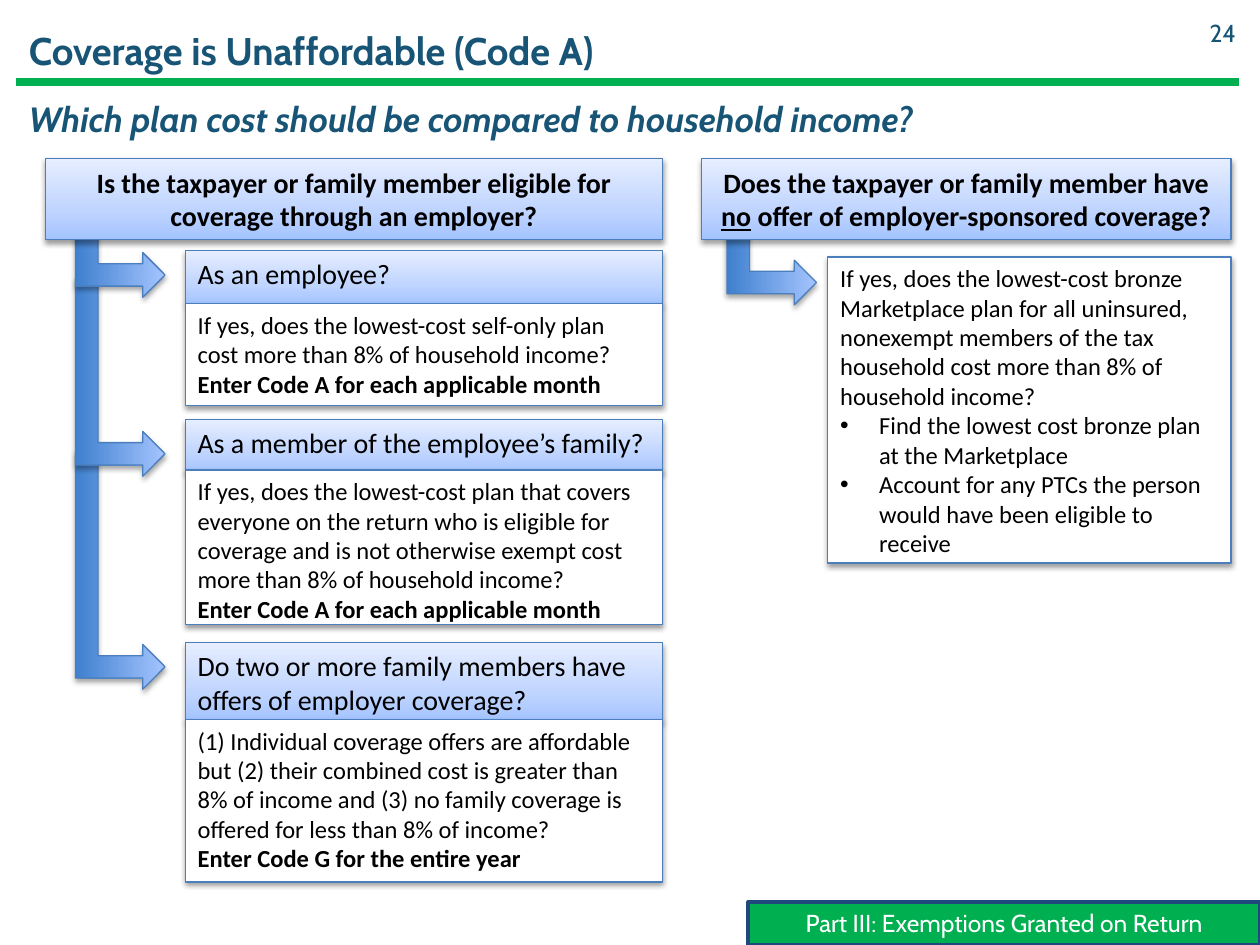
from dataclasses import dataclass

from lxml.etree import SubElement
from pptx import Presentation
from pptx.dml.color import RGBColor
from pptx.enum.shapes import MSO_CONNECTOR, MSO_SHAPE
from pptx.enum.text import MSO_ANCHOR, MSO_AUTO_SIZE, PP_ALIGN
from pptx.oxml.ns import qn
from pptx.util import Pt

EMU_PER_PX = 9144


def px(length):
    return length * EMU_PER_PX


@dataclass(frozen=True)
class Theme:
    heading_font: str = "Cabin"
    body_font: str = "Calibri"
    title_size: int = 22
    subtitle_size: int = 20
    header_size: int = 16
    body_size: int = 14
    ink: str = "000000"
    paper: str = "FFFFFF"
    teal: str = "175475"
    green: str = "00B050"
    navy: str = "1F497D"
    outline: str = "4B7EBC"
    header_stops: tuple = ((0, "A4C4FF"), (35, "BFD4FF"), (100, "E6EEFF"))
    arrow_stops: tuple = ((0, "3F80CE"), (100, "A4C4FF"))


class SlideBuilder:
    def __init__(self, slide, theme):
        self.slide = slide
        self.theme = theme

    def fill_text(self, shape, paragraphs, size, color, anchor=MSO_ANCHOR.TOP,
                  align=PP_ALIGN.LEFT, font=None, **emphasis):
        frame = shape.text_frame
        layout = {"word_wrap": True, "auto_size": MSO_AUTO_SIZE.NONE, "vertical_anchor": anchor}
        for key, value in layout.items():
            setattr(frame, key, value)
        base = {"name": font or self.theme.body_font, "size": Pt(size), **emphasis}
        for index, runs in enumerate(paragraphs):
            paragraph = frame.add_paragraph() if index else frame.paragraphs[0]
            paragraph.alignment = align
            for text, extra in runs:
                run = paragraph.add_run()
                run.text = text
                run.font.color.rgb = RGBColor.from_string(color)
                for key, value in {**base, **extra}.items():
                    setattr(run.font, key, value)
        return shape

    def heading(self, shape, text, size, **style):
        settings = {"color": self.theme.teal, "anchor": MSO_ANCHOR.MIDDLE,
                    "font": self.theme.heading_font, **style}
        self.fill_text(shape, [[(text, {})]], size, **settings)

    def title(self, text, *box):
        title = self.slide.shapes.title
        for key, value in zip(("left", "top", "width", "height"), box):
            setattr(title, key, px(value))
        self.heading(title, text, self.theme.title_size, bold=True)

    def label(self, text, size, *box, **style):
        self.heading(self.slide.shapes.add_textbox(*map(px, box)), text, size, **style)

    def rule(self, left, right, y):
        rule = self.slide.shapes.add_connector(
            MSO_CONNECTOR.STRAIGHT, px(left), px(y), px(right), px(y))
        rule.line.color.rgb = RGBColor.from_string(self.theme.green)
        rule.line.width = Pt(4.75)
        SubElement(rule._element.spPr, qn("a:effectLst"))

    def shape(self, kind, *box, fill, line, weight):
        shape = self.slide.shapes.add_shape(kind, *map(px, box))
        shape.shadow.inherit = False
        shape.line.color.rgb = RGBColor.from_string(line)
        shape.line.width = Pt(weight)
        if isinstance(fill, str):
            shape.fill.solid()
            shape.fill.fore_color.rgb = RGBColor.from_string(fill)
        else:
            self.gradient(shape, fill)
        return shape

    def gradient(self, shape, stops):
        shape.fill.gradient()
        shape.fill.gradient_angle = 90
        stop_list = shape._element.spPr.find(".//" + qn("a:gsLst"))
        for stop in list(stop_list):
            stop_list.remove(stop)
        for position, color in stops:
            stop = SubElement(stop_list, qn("a:gs"), pos=str(position * 1000))
            SubElement(stop, qn("a:srgbClr"), val=color)

    def raised(self, kind, *box, fill, opacity=38, distance=20000):
        shape = self.shape(kind, *box, fill=fill, line=self.theme.outline, weight=0.75)
        effects = shape._element.spPr.find(qn("a:effectLst"))
        shadow = SubElement(effects, qn("a:outerShdw"), blurRad="40000", dist=str(distance),
                            dir="5400000", rotWithShape="0")
        color = SubElement(shadow, qn("a:srgbClr"), val=self.theme.ink)
        SubElement(color, qn("a:alpha"), val=str(opacity * 1000))
        return shape

    def header(self, runs, *box, **style):
        panel = self.raised(MSO_SHAPE.RECTANGLE, *box, fill=self.theme.header_stops)
        self.fill_text(panel, [runs], self.theme.header_size, self.theme.ink, **style)

    def question(self, runs, *box):
        self.header(runs, *box, anchor=MSO_ANCHOR.MIDDLE, align=PP_ALIGN.CENTER, bold=True)

    def answer(self, paragraphs, *box):
        panel = self.raised(MSO_SHAPE.RECTANGLE, *box, fill=self.theme.paper)
        return self.fill_text(panel, paragraphs, self.theme.body_size, self.theme.ink)

    def bullets(self, panel, first):
        for paragraph in panel.text_frame.paragraphs[first:]:
            properties = paragraph._p.get_or_add_pPr()
            for key, value in {"marL": px(31), "indent": px(-31)}.items():
                properties.set(key, str(value))
            SubElement(properties, qn("a:buFont"), typeface="Arial")
            SubElement(properties, qn("a:buChar"), char="•")

    def arrow(self, left, top, drop, reach=71):
        shift = (drop - reach) // 2
        arrow = self.raised(MSO_SHAPE.BENT_UP_ARROW, left - shift, top + shift, drop, reach,
                            fill=self.theme.arrow_stops, opacity=35, distance=23000)
        arrow.rotation = 90

    def banner(self, text, *box):
        banner = self.shape(MSO_SHAPE.RECTANGLE, *box, fill=self.theme.green,
                            line=self.theme.navy, weight=2.25)
        self.heading(banner, text, self.theme.body_size, color=self.theme.paper,
                     anchor=MSO_ANCHOR.TOP, align=PP_ALIGN.CENTER)


CODE_A = "Enter Code A for each applicable month"
EMPLOYER_CASES = [
    ("As an employee?", 199, 42, 241, 81,
     "If yes, does the lowest-cost self-only plan cost more than 8% of household income?",
     CODE_A),
    ("As a member of the employee’s family?", 333, 42, 373, 123,
     "If yes, does the lowest-cost plan that covers everyone on the return who is eligible "
     "for coverage and is not otherwise exempt cost more than 8% of household income?",
     CODE_A),
    ("Do two or more family members have offers of employer coverage?", 510, 62, 571, 129,
     "(1) Individual coverage offers are affordable but (2) their combined cost is greater "
     "than 8% of income and (3) no family coverage is offered for less than 8% of income?",
     "Enter Code G for the entire year"),
]
MARKETPLACE_LINES = [
    "If yes, does the lowest-cost bronze Marketplace plan for all uninsured, nonexempt "
    "members of the tax household cost more than 8% of household income?",
    "Find the lowest cost bronze plan at the Marketplace",
    "Account for any PTCs the person would have been eligible to receive",
]


def main():
    deck = Presentation()
    deck.slide_width, deck.slide_height = px(1000), px(750)
    theme = Theme()
    builder = SlideBuilder(deck.slides.add_slide(deck.slide_layouts[5]), theme)

    builder.rule(13, 983, 65)
    builder.title("Coverage is Unaffordable (Code A)", 13, 11, 849, 57)
    builder.label("Which plan cost should be compared to household income?", theme.subtitle_size,
                  13, 64, 929, 52, anchor=MSO_ANCHOR.BOTTOM, bold=True, italic=True)
    builder.label("24", theme.body_size, 940, 6, 51, 40, align=PP_ALIGN.RIGHT)
    builder.banner("Part III: Exemptions Granted on Return", 594, 716, 406, 34)

    for case, top, height, *_ in EMPLOYER_CASES:
        builder.header([(case, {})], 147, top, 379, height)
    for *_, top, height, test, action in EMPLOYER_CASES:
        builder.answer([[(test, {})], [(action, {"bold": True})]], 147, top, 379, height)
    for top, drop in ((358, 189), (221, 157), (165, 71)):
        builder.arrow(60, top, drop)
    builder.question(
        [("Is the taxpayer or family member eligible for coverage through an employer?", {})],
        36, 126, 490, 64)

    marketplace = builder.answer([[(line, {})] for line in MARKETPLACE_LINES], 657, 204, 320, 243)
    builder.bullets(marketplace, first=1)
    builder.arrow(577, 171, 71)
    builder.question(
        [("Does the taxpayer or family member have ", {}), ("no", {"underline": True}),
         (" offer of employer-sponsored coverage?", {})], 557, 126, 420, 64)

    deck.save("out.pptx")


if __name__ == "__main__":
    main()
